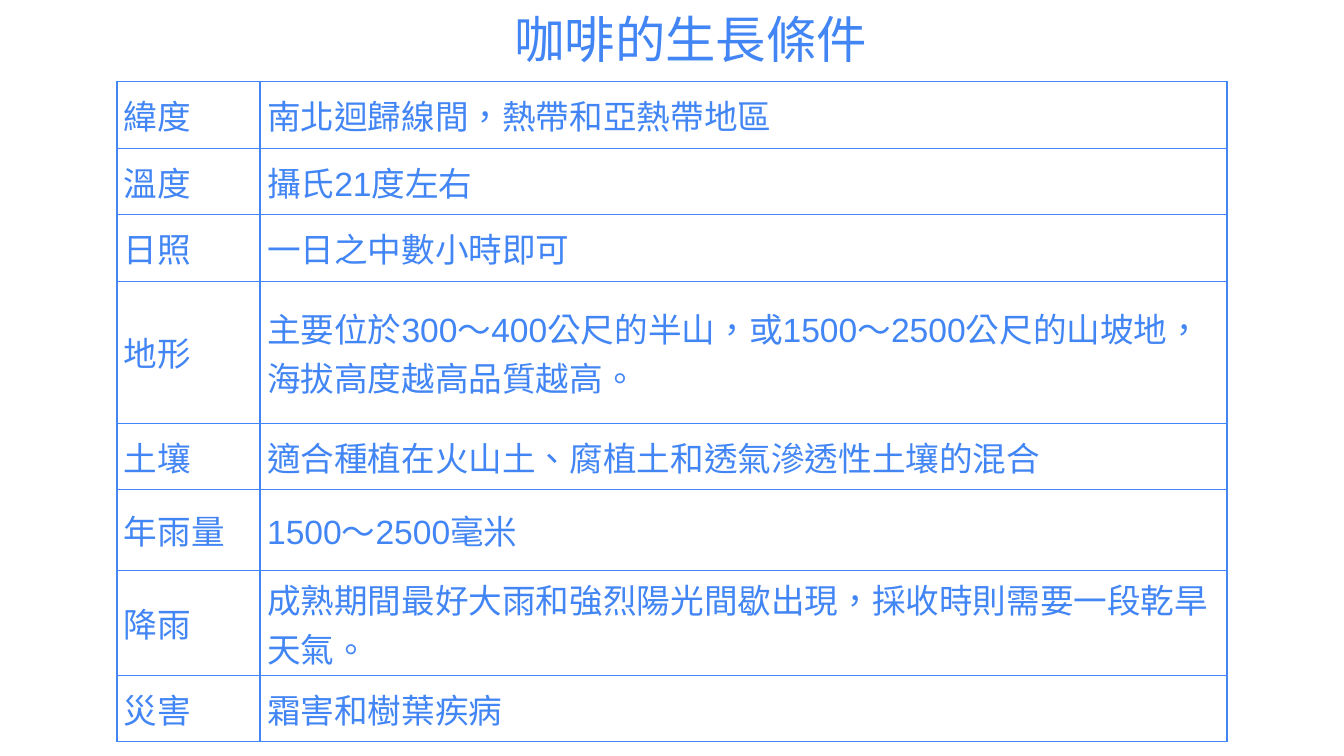
from dataclasses import dataclass

from lxml import etree
from pptx import Presentation
from pptx.dml.color import RGBColor
from pptx.enum.lang import MSO_LANGUAGE_ID
from pptx.enum.text import MSO_ANCHOR, PP_ALIGN
from pptx.oxml.ns import qn
from pptx.util import Inches, Pt

MIDDLE, BOTTOM = MSO_ANCHOR.MIDDLE, MSO_ANCHOR.BOTTOM
CENTER = PP_ALIGN.CENTER
TRADITIONAL_CHINESE = MSO_LANGUAGE_ID.TRADITIONAL_CHINESE


@dataclass(frozen=True)
class Theme:
    blue: str = "4285F4"
    title_font: str = "Calibri"
    title_size: int = 36
    body_font: str = "Arial"
    body_size: int = 24
    border_width: int = 1


THEME = Theme()

TITLE = "咖啡的生長條件"
COLUMN_WIDTHS = (1.42, 9.59)
# Row height, condition, description
CONDITIONS = [
    (0.66, "緯度", "南北迴歸線間，熱帶和亞熱帶地區"),
    (0.66, "溫度", "攝氏21度左右"),
    (0.66, "日照", "一日之中數小時即可"),
    (1.41, "地形", "主要位於300～400公尺的半山，或1500～2500公尺的山坡地，海拔高度越高品質越高。"),
    (0.66, "土壤", "適合種植在火山土、腐植土和透氣滲透性土壤的混合"),
    (0.8, "年雨量", "1500～2500毫米"),
    (1.04, "降雨", "成熟期間最好大雨和強烈陽光間歇出現，採收時則需要一段乾旱天氣。"),
    (0.66, "災害", "霜害和樹葉疾病"),
]


def apply_format(target, values):
    for name, value in values.items():
        setattr(target, name, value)


def write_text(paragraph, text, font_name, size):
    run = paragraph.add_run()
    run.text = text
    apply_format(run.font, {
        "name": font_name, "size": Pt(size), "language_id": TRADITIONAL_CHINESE})
    run.font.color.rgb = RGBColor.from_string(THEME.blue)


def add_borders(cell):
    """Draw all four sides; border elements come before the cell fill."""
    properties = cell._tc.get_or_add_tcPr()
    for position, side in enumerate(("a:lnL", "a:lnR", "a:lnT", "a:lnB")):
        line = etree.Element(qn(side), w=str(Pt(THEME.border_width)))
        fill = etree.SubElement(line, qn("a:solidFill"))
        etree.SubElement(fill, qn("a:srgbClr"), val=THEME.blue)
        properties.insert(position, line)


def add_title(slide, left, top, width, height):
    shape = slide.shapes.add_textbox(
        Inches(left), Inches(top), Inches(width), Inches(height))
    apply_format(shape.text_frame, {"word_wrap": True, "vertical_anchor": BOTTOM})
    paragraph = shape.text_frame.paragraphs[0]
    apply_format(paragraph, {"alignment": CENTER, "line_spacing": 0.85})
    write_text(paragraph, TITLE, THEME.title_font, THEME.title_size)


def add_conditions_table(slide, left, top):
    height = sum(row[0] for row in CONDITIONS)
    table = slide.shapes.add_table(
        len(CONDITIONS), len(COLUMN_WIDTHS), Inches(left), Inches(top),
        Inches(sum(COLUMN_WIDTHS)), Inches(height)).table
    apply_format(table, {"first_row": False, "horz_banding": False})
    for column, width in zip(table.columns, COLUMN_WIDTHS):
        column.width = Inches(width)

    cell_format = {
        "vertical_anchor": MIDDLE,
        "margin_left": Inches(0.07), "margin_right": Inches(0.07),
        "margin_top": Inches(0.04), "margin_bottom": Inches(0.04),
    }
    for row, (row_height, *texts) in zip(table.rows, CONDITIONS):
        row.height = Inches(row_height)
        for cell, text in zip(row.cells, texts):
            apply_format(cell, cell_format)
            cell.fill.background()
            add_borders(cell)
            write_text(cell.text_frame.paragraphs[0], text,
                       THEME.body_font, THEME.body_size)


def main():
    presentation = Presentation()
    apply_format(presentation, {
        "slide_width": Inches(13.33), "slide_height": Inches(7.5)})
    slide = presentation.slides.add_slide(presentation.slide_layouts[6])
    add_title(slide, 4.54, 0, 4.62, 0.73)
    add_conditions_table(slide, 1.16, 0.81)
    presentation.save("out.pptx")


if __name__ == "__main__":
    main()
